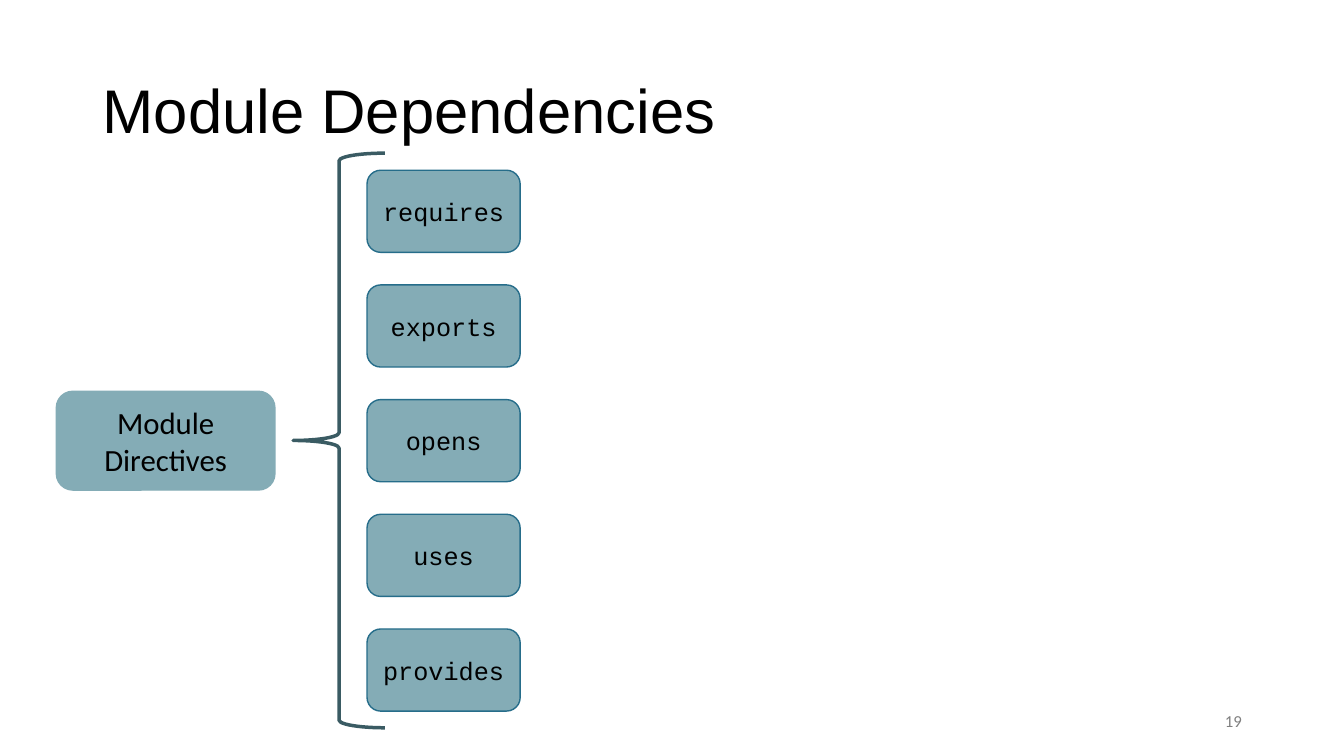
from pptx import Presentation
from pptx.dml.color import RGBColor
from pptx.enum.shapes import MSO_SHAPE as Shape
from pptx.enum.text import MSO_ANCHOR as Anchor, PP_ALIGN as Align
from pptx.util import Cm, Pt

TEAL = "84ACB6"
DIRECTIVES = ["requires", "exports", "opens", "uses", "provides"]
FIRST_TOP, ROW_STEP = 4.29, 2.89


def rgb(value):
    return RGBColor.from_string(value)


def place(s, left, top, width, height):
    s.left, s.top, s.width, s.height = Cm(left), Cm(top), Cm(width), Cm(height)


def write(s, text, size, font, align, color="000000"):
    tf = s.text_frame
    tf.text = text
    tf.word_wrap = True
    tf.vertical_anchor = Anchor.MIDDLE
    p = tf.paragraphs[0]
    p.alignment = align
    f = p.runs[0].font
    f.size, f.name = Pt(size), font
    f.color.rgb = rgb(color)
    return p


def add_title(slide, text):
    s = slide.shapes.title
    place(s, 2.33, 1.02, 29.21, 3.68)
    write(s, text, 44, "Arial", Align.LEFT).line_spacing = 0.9


def add_outline(slide, kind, box, color, weight):
    s = slide.shapes.add_shape(kind, *map(Cm, box))
    s.shadow.inherit = False
    s.line.color.rgb = rgb(color)
    s.line.width = Pt(weight)
    return s


def add_box(slide, text, box, line, size, font):
    s = add_outline(slide, Shape.ROUNDED_RECTANGLE, box, line, 1)
    s.fill.solid()
    s.fill.fore_color.rgb = rgb(TEAL)
    write(s, text, size, font, Align.CENTER)


def add_brace(slide, box):
    s = add_outline(slide, Shape.LEFT_BRACE, box, "3A5B63", 2.5)
    s.fill.background()


def add_page_number(slide, number):
    s = slide.shapes.add_textbox(Cm(23.93), Cm(17.65), Cm(7.62), Cm(1.02))
    write(s, number, 12, "Calibri", Align.RIGHT, "808080")


def main():
    prs = Presentation()
    prs.slide_width, prs.slide_height = Cm(33.87), Cm(19.05)
    slide = prs.slides.add_slide(prs.slide_layouts[5])
    add_title(slide, "Module Dependencies")
    add_box(slide, "Module Directives", (1.42, 9.86, 5.51, 2.49), TEAL, 22, "Calibri")
    add_brace(slide, (7.39, 3.86, 2.31, 14.48))
    for i, directive in enumerate(DIRECTIVES):
        box = (9.25, FIRST_TOP + i * ROW_STEP, 3.86, 2.07)
        add_box(slide, directive, box, "266D8A", 18, "Courier New")
    add_page_number(slide, "19")
    prs.save("out.pptx")


if __name__ == "__main__":
    main()
